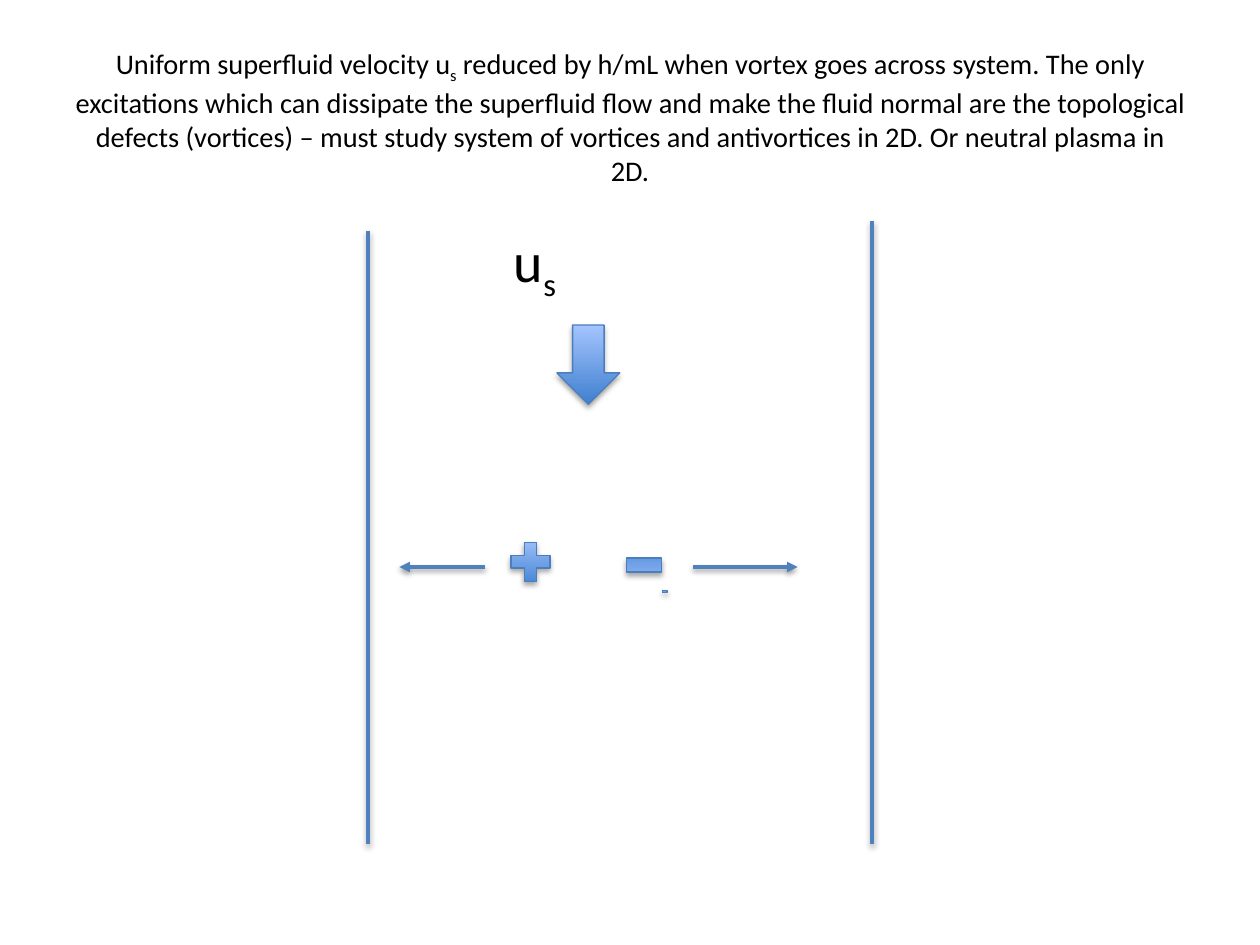
from lxml.etree import SubElement
from pptx import Presentation
from pptx.dml.color import RGBColor
from pptx.enum.shapes import MSO_CONNECTOR, MSO_SHAPE
from pptx.enum.text import MSO_ANCHOR, PP_ALIGN
from pptx.oxml.ns import qn
from pptx.util import Inches, Pt

FONT = "Calibri"
BLACK = "000000"
LINE_BLUE = "4F81BD"
OUTLINE_BLUE = "4B7EBC"
GRADIENT = ("3F80CE", "A4C4FF")  # bottom to top
FLOW_LEVEL = 4.5  # height of the two horizontal arrows


def color(hex_string):
    return RGBColor.from_string(hex_string)


def add_shadow(shape, opacity, distance):
    """Soft black shadow straight below; opacity in percent, distance in points."""
    effects = SubElement(shape._element.spPr, qn("a:effectLst"))
    shadow = SubElement(effects, qn("a:outerShdw"), blurRad=str(Pt(3.1)),
                        dist=str(Pt(distance)), dir="5400000", rotWithShape="0")
    shadow_color = SubElement(shadow, qn("a:srgbClr"), val=BLACK)
    SubElement(shadow_color, qn("a:alpha"), val=str(opacity * 1000))


def add_text(slide, left, top, width, height, runs, size=18, align=PP_ALIGN.LEFT,
             anchor=MSO_ANCHOR.TOP, indent=0):
    """Add one paragraph; runs are (text, is_subscript) pairs."""
    box = slide.shapes.add_textbox(Inches(left), Inches(top), Inches(width), Inches(height))
    frame = box.text_frame
    frame.word_wrap = True
    frame.vertical_anchor = anchor
    paragraph = frame.paragraphs[0]
    paragraph.alignment = align
    if indent:
        paragraph._p.get_or_add_pPr().set("marL", str(Inches(indent)))
    for text, is_subscript in runs:
        run = paragraph.add_run()
        run.text = text
        run.font.name = FONT
        run.font.size = Pt(size)
        run.font.color.rgb = color(BLACK)
        if is_subscript:
            run.font._element.set("baseline", "-25000")


def add_line(slide, start, end, arrow=False):
    connector = slide.shapes.add_connector(
        MSO_CONNECTOR.STRAIGHT, *(Inches(value) for value in (*start, *end)))
    connector.line.color.rgb = color(LINE_BLUE)
    connector.line.width = Pt(2)
    if arrow:
        SubElement(connector.line._get_or_add_ln(), qn("a:tailEnd"), type="triangle")
    add_shadow(connector, opacity=38, distance=1.6)


def add_symbol(slide, kind, left, top, width, height, flip=False):
    shape = slide.shapes.add_shape(
        kind, Inches(left), Inches(top), Inches(width), Inches(height))
    shape.fill.gradient()
    shape.fill.gradient_angle = 90
    for stop, hex_string in zip(shape.fill.gradient_stops, GRADIENT):
        stop.color.rgb = color(hex_string)
    shape.line.color.rgb = color(OUTLINE_BLUE)
    shape.line.width = Pt(0.75)
    if flip:
        shape._element.spPr.xfrm.set("flipV", "1")
    add_shadow(shape, opacity=35, distance=1.8)


def main():
    presentation = Presentation()
    presentation.slide_width = Inches(10)
    presentation.slide_height = Inches(7.5)
    slide = presentation.slides.add_slide(presentation.slide_layouts[6])

    # Title and velocity label
    add_text(slide, 0.5, 0.3, 9, 1.25, [
        ("Uniform superfluid velocity u", False),
        ("s", True),
        (" reduced by h/mL when vortex goes across system. The only excitations "
         "which can dissipate the superfluid flow and make the fluid normal are the "
         "topological defects (vortices) – must study system of vortices and "
         "antivortices in 2D. Or neutral plasma in 2D.", False),
    ], size=16.2, align=PP_ALIGN.CENTER, anchor=MSO_ANCHOR.MIDDLE)
    add_text(slide, 0.5, 1.75, 9, 4.95, [("u", False), ("s", True)], size=32, indent=3.48)

    # Channel walls
    for x, top in ((2.92, 1.83), (6.92, 1.75)):
        add_line(slide, (x, top), (x, 6.7))

    # Vortex and antivortex
    add_symbol(slide, MSO_SHAPE.MATH_PLUS, 4, 4.25, 0.42, 0.42)
    add_symbol(slide, MSO_SHAPE.MATH_MINUS, 4.92, 4.25, 0.38, 0.47, flip=True)
    add_symbol(slide, MSO_SHAPE.MATH_MINUS, 5.25, 4.67, 0.05, 0.05)

    # Directions in which they drift apart
    for start, end in ((5.5, 6.33), (3.85, 3.17)):
        add_line(slide, (start, FLOW_LEVEL), (end, FLOW_LEVEL), arrow=True)

    # Superfluid flow
    add_symbol(slide, MSO_SHAPE.DOWN_ARROW, 4.42, 2.58, 0.5, 0.63)

    presentation.save("out.pptx")


if __name__ == "__main__":
    main()
